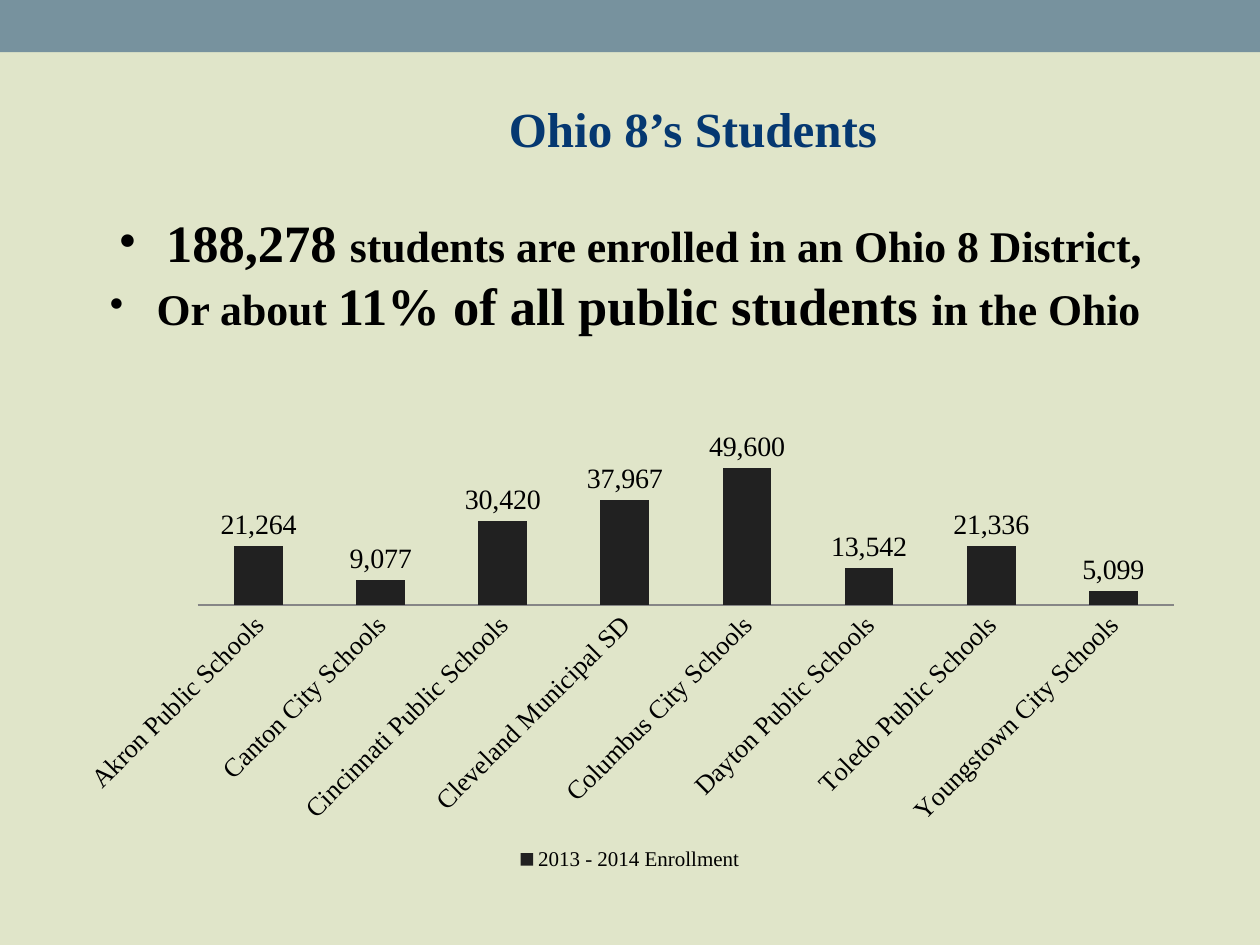
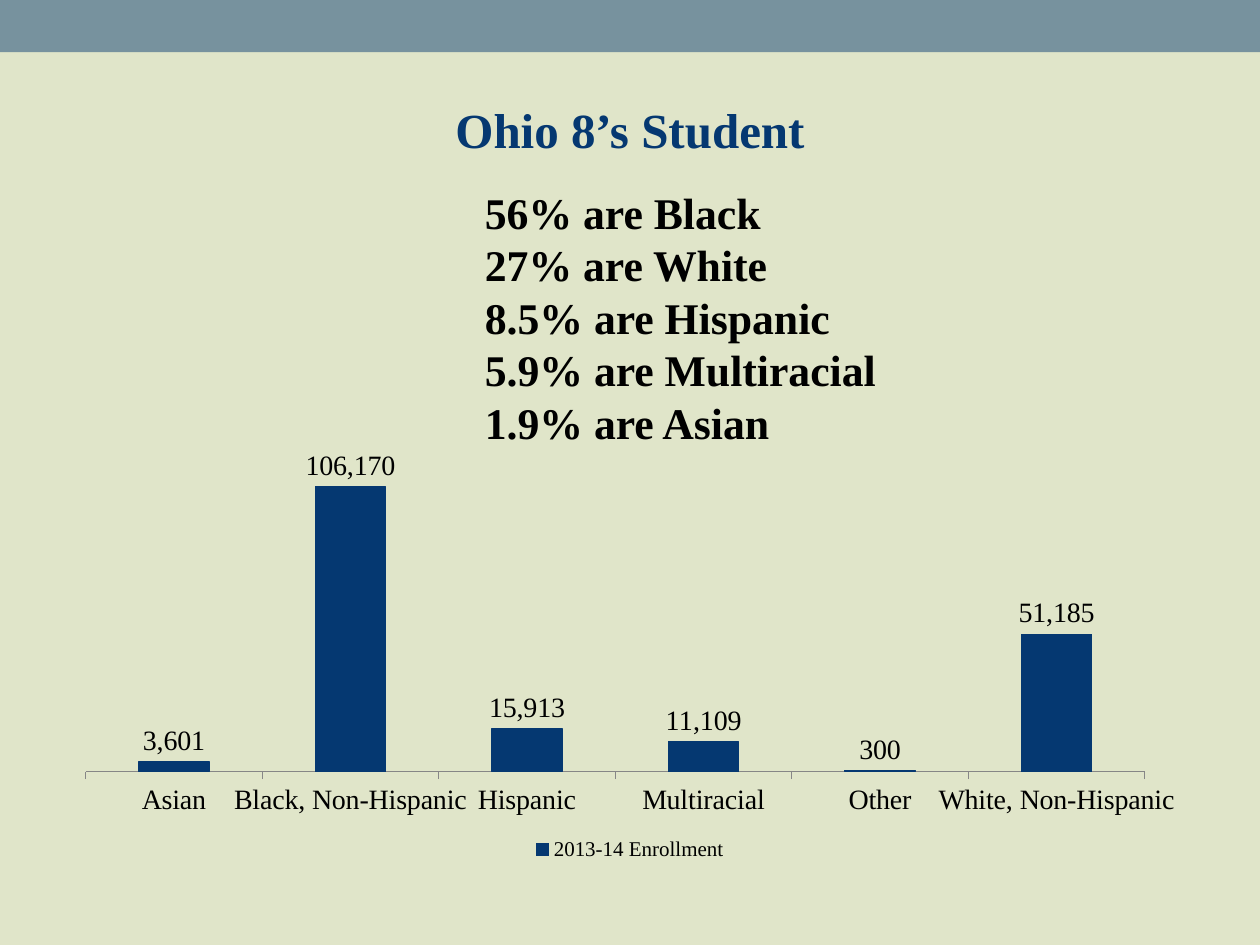
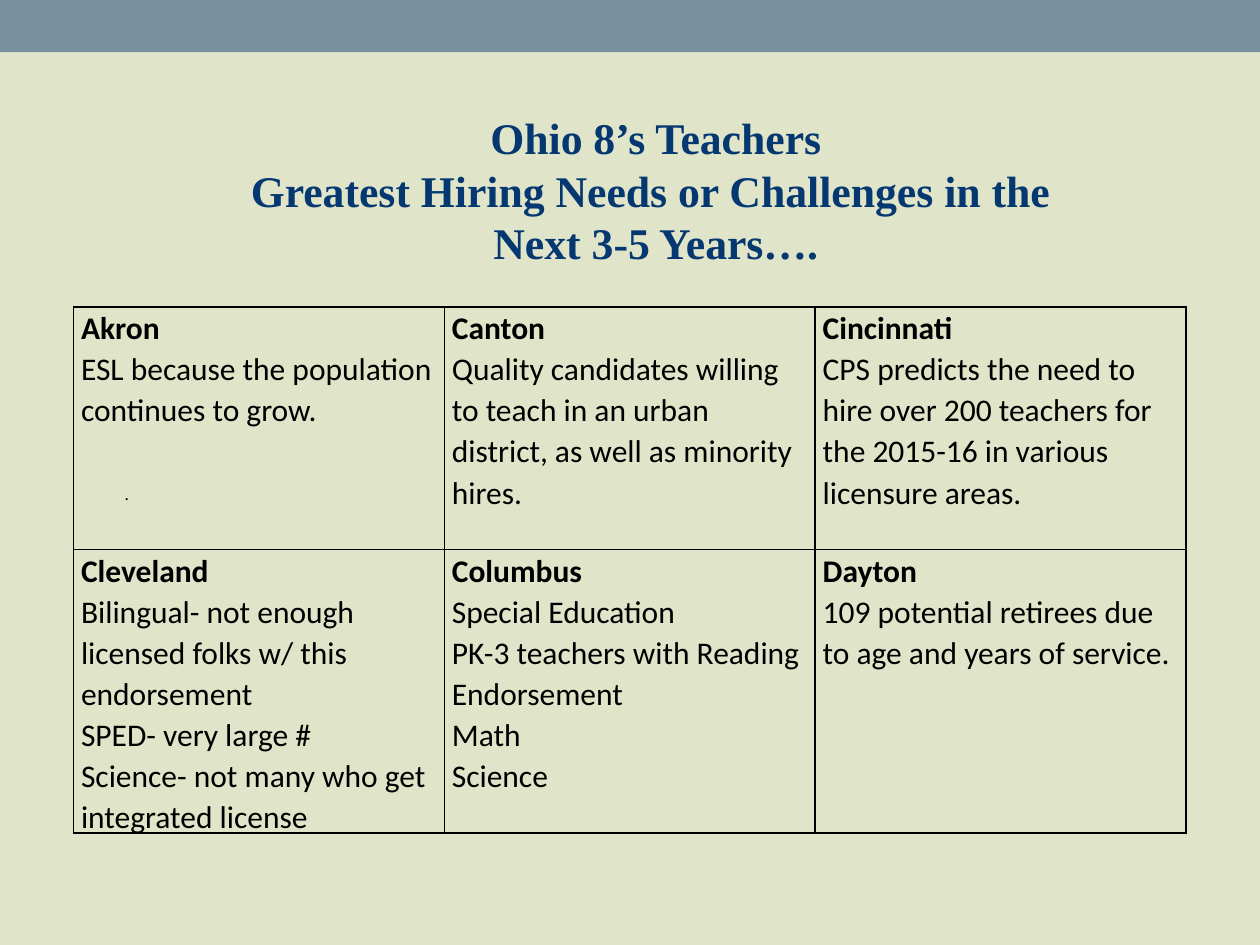
import pptx
import pptx.chart.data
import pptx.dml.color
import pptx.enum.chart
import pptx.enum.shapes
import pptx.enum.text
import pptx.oxml
import pptx.oxml.ns
import pptx.util

# The slide is a grid of 100 columns by 75 rows, each a tenth of an inch.
COLUMNS, ROWS = 100, 75
CELL = pptx.util.Inches(0.1)

NAVY, CREAM, BLACK, CHARCOAL, GREY = "053871", "E0E5C9", "000000", "212121", "868686"
SERIF, SANS = "Times New Roman", "Calibri"
TITLE_SIZE, BODY_SIZE, BIG_SIZE = 28, 25, 30

ALIGN = pptx.enum.text.PP_ALIGN
ANCHOR = pptx.enum.text.MSO_ANCHOR

ENROLLMENT = {
    "Akron Public Schools": 21264,
    "Canton City Schools": 9077,
    "Cincinnati Public Schools": 30420,
    "Cleveland Municipal SD": 37967,
    "Columbus City Schools": 49600,
    "Dayton Public Schools": 13542,
    "Toledo Public Schools": 21336,
    "Youngstown City Schools": 5099,
}
ETHNICITY = {
    "Asian": 3601,
    "Black, Non-Hispanic": 106170,
    "Hispanic": 15913,
    "Multiracial": 11109,
    "Other": 300,
    "White, Non-Hispanic": 51185,
}
HIRING_NEEDS = [
    [
        ["Akron", "ESL because the population continues to grow."],
        ["Canton", "Quality candidates willing to teach in an urban district, "
                   "as well as minority hires."],
        ["Cincinnati", "CPS predicts the need to hire over 200 teachers for the "
                       "2015-16 in various licensure areas."],
    ],
    [
        ["Cleveland", "Bilingual- not enough licensed folks w/ this endorsement",
         "SPED- very large #", "Science- not many who get integrated license"],
        ["Columbus", "Special Education", "PK-3 teachers with Reading Endorsement",
         "Math", "Science"],
        ["Dayton", "109 potential retirees due to age and years of service."],
    ],
]


def color(value):
    return pptx.dml.color.RGBColor.from_string(value)


def grid(*counts):
    return [round(count * CELL) for count in counts]


def add_xml(parent, tag, **attributes):
    child = pptx.oxml.parse_xml(f"<a:{tag} {pptx.oxml.ns.nsdecls('a')}/>")
    for name, value in attributes.items():
        child.set(name, str(value))
    parent.append(child)
    return child


def set_font(font, size, name=SERIF, rgb=BLACK, bold=False):
    font.size, font.name, font.bold = pptx.util.Pt(size), name, bold
    font.color.rgb = color(rgb)


def write(p, text, size=BODY_SIZE, font=SERIF, rgb=BLACK, bold=True,
          align=ALIGN.LEFT, bullet=False, spacing=None):
    """Fill a paragraph; text is a string or a list of (string, size) runs."""
    p.alignment = align
    if spacing:
        p.line_spacing = spacing
    if bullet:
        pPr = p._p.get_or_add_pPr()
        indent = pptx.util.Inches(0.38)
        pPr.set("marL", str(indent))
        pPr.set("indent", str(-indent))
        add_xml(pPr, "buFont", typeface=font)
        add_xml(pPr, "buChar", char="•")
    runs = [(text, size)] if isinstance(text, str) else text
    for run_text, run_size in runs:
        r = p.add_run()
        r.text = run_text
        set_font(r.font, run_size, font, rgb, bold)


def paragraphs(tf, count):
    return [tf.paragraphs[0]] + [tf.add_paragraph() for _ in range(count - 1)]


def add_text(s, box, lines, anchor=ANCHOR.TOP, wrap=True, **style):
    tf = s.shapes.add_textbox(*grid(*box)).text_frame
    tf.word_wrap, tf.vertical_anchor = wrap, anchor
    for p, line in zip(paragraphs(tf, len(lines)), lines):
        write(p, line, **style)


def add_title(s, box, lines, size=TITLE_SIZE, anchor=ANCHOR.MIDDLE):
    add_text(s, box, lines, anchor, size=size, rgb=NAVY, align=ALIGN.CENTER)


def add_slide(prs):
    """Add a blank slide with the translucent band along its top."""
    s = prs.slides.add_slide(prs.slide_layouts[6])
    band = s.shapes.add_shape(pptx.enum.shapes.MSO_SHAPE.RECTANGLE,
                              *grid(0, 0, COLUMNS, 4.15))
    band.shadow.inherit = False
    band.line.fill.background()
    band.fill.solid()
    band.fill.fore_color.rgb = color(NAVY)
    fill = band.fill._xPr.find(pptx.oxml.ns.qn("a:solidFill"))
    add_xml(fill[0], "alpha", val=48000)
    return s


def add_column_chart(s, box, name, values, rgb, label_size, ticks, overlap=0,
                     outlined=False):
    data = pptx.chart.data.CategoryChartData(number_format="#,##0")
    data.categories = list(values)
    data.add_series(name, list(values.values()))
    kind = pptx.enum.chart.XL_CHART_TYPE.COLUMN_CLUSTERED
    chart = s.shapes.add_chart(kind, *grid(*box), data).chart
    set_font(chart.font, 10)
    chart.has_title = False

    chart.has_legend = True
    chart.legend.position = pptx.enum.chart.XL_LEGEND_POSITION.BOTTOM
    chart.legend.include_in_layout = False
    set_font(chart.legend.font, 12)

    chart.value_axis.has_major_gridlines = False
    chart.value_axis.visible = False
    axis = chart.category_axis
    axis.major_tick_mark = ticks
    axis.format.line.color.rgb = color(GREY)
    set_font(axis.tick_labels.font, label_size)

    plot = chart.plots[0]
    plot.gap_width, plot.overlap, plot.vary_by_categories = 150, overlap, False
    series = plot.series[0]
    series.format.fill.solid()
    series.format.fill.fore_color.rgb = color(rgb)
    if outlined:
        series.format.line.color.rgb = color(rgb)
        series.format.line.width = pptx.util.Pt(0.75)
    series.invert_if_negative = False
    plot.has_data_labels = True
    labels = plot.data_labels
    labels.show_value = True
    labels.number_format, labels.number_format_is_linked = "#,##0", False
    labels.position = pptx.enum.chart.XL_LABEL_POSITION.OUTSIDE_END
    set_font(labels.font, 16)


def add_borders(cell):
    tcPr = cell._tc.get_or_add_tcPr()
    for index, side in enumerate(("lnL", "lnR", "lnT", "lnB")):
        line = add_xml(tcPr, side, w=pptx.util.Pt(1))
        add_xml(add_xml(line, "solidFill"), "srgbClr", val=BLACK)
        tcPr.insert(index, line)


def add_city_table(s, box, row_heights, cities):
    """Add a bordered table whose cells each hold a city and its needs."""
    table = s.shapes.add_table(len(cities), len(cities[0]), *grid(*box)).table
    table.first_row = table.horz_banding = False
    for row, height in zip(table.rows, grid(*row_heights)):
        row.height = height
    for row, row_cities in zip(table.rows, cities):
        for cell, lines in zip(row.cells, row_cities):
            cell.fill.background()
            add_borders(cell)
            cell.margin_left = cell.margin_right = pptx.util.Inches(0.06)
            cell.margin_top = cell.margin_bottom = 0
            for i, p in enumerate(paragraphs(cell.text_frame, len(lines))):
                write(p, lines[i], size=18, font=SANS, bold=i == 0, spacing=1.07)


def add_enrollment_slide(prs):
    s = add_slide(prs)
    add_title(s, (10, 6.15, 90, 8), ["Ohio 8’s Students"])
    add_column_chart(s, (5, 34.2, 90, 35.3), "2013 - 2014 Enrollment", ENROLLMENT,
                     CHARCOAL, 15, pptx.enum.chart.XL_TICK_MARK.NONE, overlap=-25)
    facts = [
        [("188,278 ", BIG_SIZE),
         ("students are enrolled in an Ohio 8 District,", BODY_SIZE)],
        [("Or about ", BODY_SIZE), ("11% of all public students ", BIG_SIZE),
         ("in the Ohio ", BODY_SIZE)],
    ]
    add_text(s, (3.75, 16.15, 92.5, 11.1), facts, align=ALIGN.CENTER, bullet=True)


def add_ethnicity_slide(prs):
    s = add_slide(prs)
    add_title(s, (5, 6.2, 90, 8), ["Ohio 8’s Student"])
    add_text(s, (37.5, 14.23, 35, 22),
             ["56% are Black", "27% are White", "8.5% are Hispanic",
              "5.9% are Multiracial", "1.9% are Asian"])
    add_column_chart(s, (5, 35, 90, 33.7), "2013-14 Enrollment", ETHNICITY,
                     NAVY, 16, pptx.enum.chart.XL_TICK_MARK.OUTSIDE, outlined=True)


def add_teachers_slide(prs):
    s = add_slide(prs)
    add_title(s, (12.9, 8.3, 78.3, 17.8),
              ["Ohio 8’s Teachers", "Greatest Hiring Needs or Challenges in the ",
               "Next 3-5 Years…."], size=BODY_SIZE, anchor=ANCHOR.TOP)
    add_text(s, (8.9, 37.8, 2.4, 2.7), ["."], ANCHOR.MIDDLE, wrap=False,
             size=10, font=SANS, bold=False)
    add_city_table(s, (5.83, 24.35, 88.3, 41.7), (19.25, 22.5), HIRING_NEEDS)


def main():
    prs = pptx.Presentation()
    prs.slide_width, prs.slide_height = grid(COLUMNS, ROWS)
    background = prs.slide_master.background.fill
    background.solid()
    background.fore_color.rgb = color(CREAM)
    add_enrollment_slide(prs)
    add_ethnicity_slide(prs)
    add_teachers_slide(prs)
    prs.save("out.pptx")


if __name__ == "__main__":
    main()
